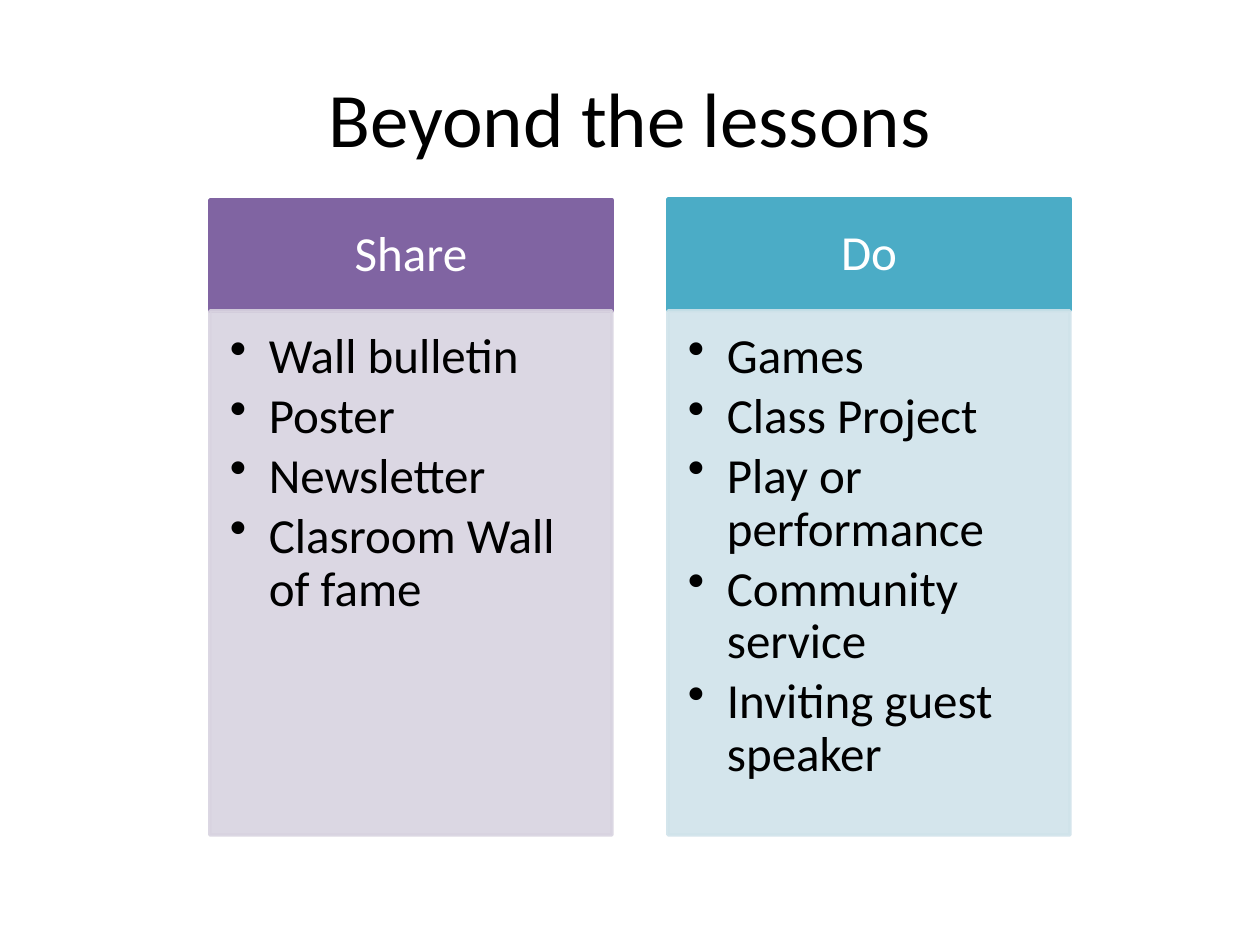
from lxml.etree import SubElement
from pptx import Presentation
from pptx.dml.color import RGBColor
from pptx.enum.shapes import MSO_SHAPE
from pptx.enum.text import MSO_ANCHOR, PP_ALIGN
from pptx.oxml.ns import qn
from pptx.util import Pt

EMU_PER_PX = 914400 / 126
FONT = "Calibri"
COLORS = {
    "text": "000000",
    "heading": "FFFFFF",
    "share": "8064A2",
    "share_tint": "D8D3E0",
    "do": "4BACC6",
    "do_tint": "D0E3EA",
}
HEADER_HEIGHT = 111
BODY_HEIGHT = 524
COLUMNS = [
    (210, 200, "share", "Share",
     ["Wall bulletin", "Poster", "Newsletter", "Clasroom Wall of fame"]),
    (668, 199, "do", "Do",
     ["Games", "Class Project", "Play or performance", "Community service",
      "Inviting guest speaker"]),
]


def px(length):
    return round(length * EMU_PER_PX)


def rgb(name):
    return RGBColor.from_string(COLORS[name])


def set_frame(frame, anchor, insets):
    """Wrap the text and set its insets in px: left, top, right, bottom."""
    frame.word_wrap = True
    frame.vertical_anchor = anchor
    (frame.margin_left, frame.margin_top,
     frame.margin_right, frame.margin_bottom) = map(px, insets)


def style_paragraph(paragraph, size, color, align):
    paragraph.alignment = align
    paragraph.font.name = FONT
    paragraph.font.size = Pt(size)
    paragraph.font.color.rgb = rgb(color)


def add_bullet(paragraph, indent):
    properties = paragraph._p.get_or_add_pPr()
    properties.set("marL", str(px(indent)))
    properties.set("indent", str(-px(indent)))
    bullet = properties.makeelement(qn("a:buChar"), {"char": "•"})
    properties.insert_element_before(bullet, "a:tabLst", "a:defRPr", "a:extLst")


def add_panel(slide, left, top, width, height, color, opacity=100):
    panel = slide.shapes.add_shape(
        MSO_SHAPE.RECTANGLE, px(left), px(top), px(width), px(height))
    panel.shadow.inherit = False
    panel.fill.solid()
    panel.fill.fore_color.rgb = rgb(color)
    panel.line.color.rgb = rgb(color)
    panel.line.width = Pt(2)
    if opacity < 100:
        for tint in panel._element.spPr.iter(qn("a:srgbClr")):
            SubElement(tint, qn("a:alpha"), val=str(opacity * 1000))
    return panel.text_frame


def add_title(slide, left, top, width, height, title):
    frame = slide.shapes.add_textbox(
        px(left), px(top), px(width), px(height)).text_frame
    set_frame(frame, MSO_ANCHOR.MIDDLE, (13, 6, 13, 6))
    frame.text = title
    style_paragraph(frame.paragraphs[0], 44, "text", PP_ALIGN.CENTER)


def add_column(slide, left, top, width, body_top, color, heading, items):
    """Draw a heading panel with a tinted list panel below it."""
    header = add_panel(slide, left, top, width, HEADER_HEIGHT, color)
    set_frame(header, MSO_ANCHOR.MIDDLE, (28, 15, 28, 15))
    header.text = heading
    style_paragraph(header.paragraphs[0], 28, "heading", PP_ALIGN.CENTER)
    header.paragraphs[0].line_spacing = 0.9

    body = add_panel(slide, left, body_top, width, BODY_HEIGHT,
                     f"{color}_tint", opacity=90)
    set_frame(body, MSO_ANCHOR.TOP, (20, 20, 28, 30))
    body.text = "\n".join(items)
    for item in body.paragraphs:
        item.level = 1
        style_paragraph(item, 28, "text", PP_ALIGN.LEFT)
        item.line_spacing = 0.9
        item.space_after = Pt(4)
        add_bullet(item, 39)


def main():
    deck = Presentation()
    deck.slide_width, deck.slide_height = px(1260), px(945)
    slide = deck.slides.add_slide(deck.slide_layouts[6])
    add_title(slide, 63, 38, 1134, 157, "Beyond the lessons")
    for left, top, color, heading, items in COLUMNS:
        add_column(slide, left, top, 402, 311, color, heading, items)
    deck.save("out.pptx")


if __name__ == "__main__":
    main()
